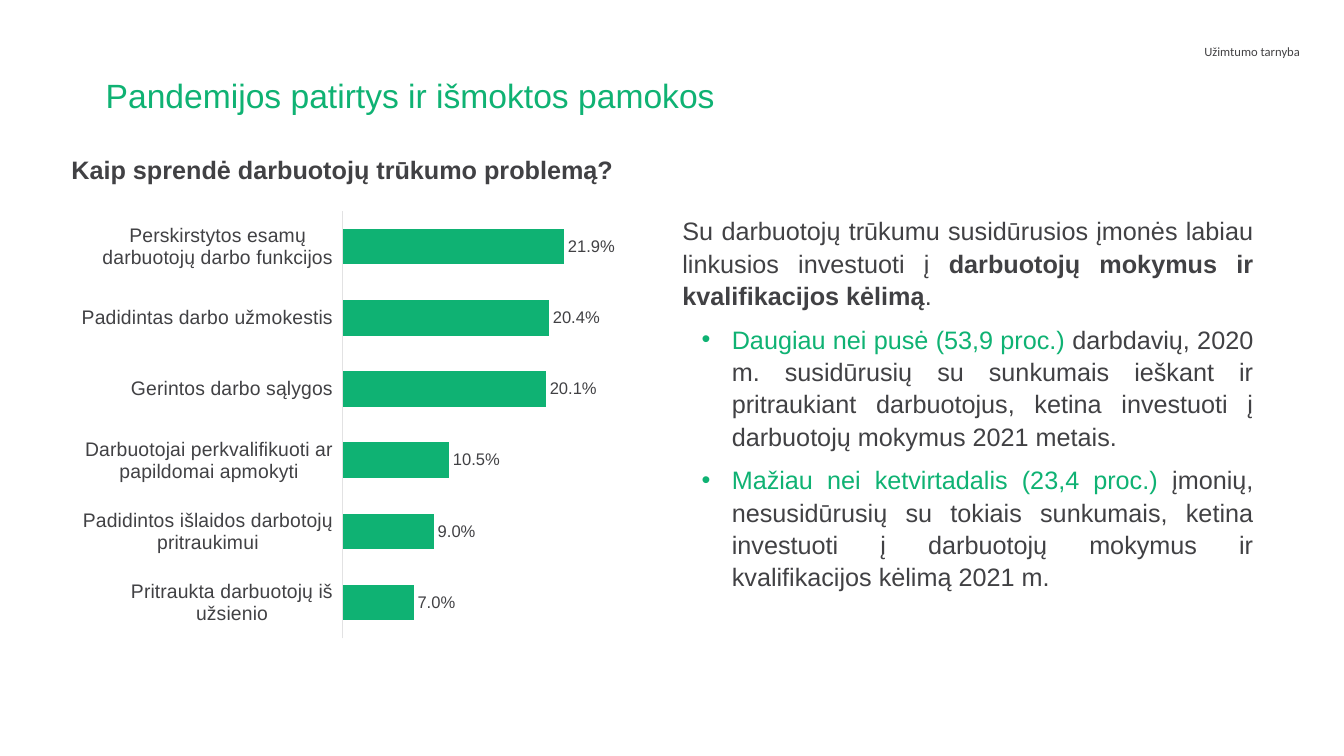
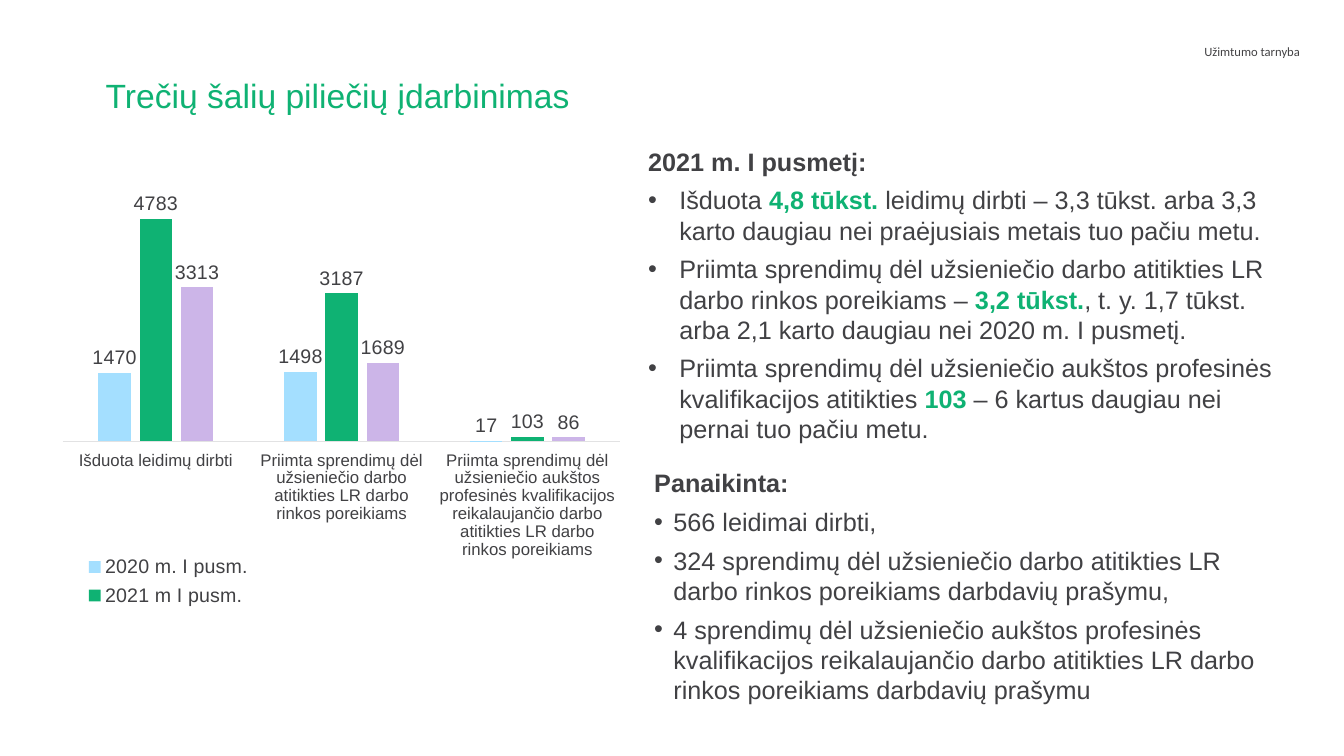
import pptx
import pptx.chart.data
import pptx.dml.color
import pptx.enum.chart
import pptx.enum.text
import pptx.oxml
import pptx.oxml.ns
import pptx.util

Inches, Pt = pptx.util.Inches, pptx.util.Pt
RGB = pptx.dml.color.RGBColor.from_string
Align = pptx.enum.text.PP_ALIGN
Kind = pptx.enum.chart.XL_CHART_TYPE
qn, nsdecls = pptx.oxml.ns.qn, pptx.oxml.ns.nsdecls
parse_xml = pptx.oxml.parse_xml

HUES = {"green": "0FB273", "text": "414144", "head": "434244",
        "line": "E2E2E3", "sky": "A4DFFF", "lilac": "CCB5E8"}
LAYOUT = ('<c:layout %s><c:manualLayout>%s<c:xMode val="edge"/><c:yMode val="edge"/>'
          '<c:x val="%s"/><c:y val="%s"/><c:w val="%s"/><c:h val="%s"/>'
          '</c:manualLayout></c:layout>')


def write(slide, box, paras, size=18, font="Arial", hue="text", align=Align.LEFT,
          space=None, after=0, indent=None):
    """Add a text box; a run is (text, flags), b for bold and g for green.

    With an indent, every paragraph after the first gets a bullet; the indent
    holds its left margin and its hang.
    """
    frame = slide.shapes.add_textbox(*map(Inches, box)).text_frame
    frame.word_wrap = True
    for i, runs in enumerate(paras):
        para = frame.paragraphs[0] if i == 0 else frame.add_paragraph()
        if indent and i > 0:
            props = para._p.get_or_add_pPr()
            props.set("marL", str(Inches(indent[0])))
            props.set("indent", str(-Inches(indent[1])))
            props.append(parse_xml('<a:buFont %s typeface="Arial"/>' % nsdecls("a")))
            props.append(parse_xml('<a:buChar %s char="•"/>' % nsdecls("a")))
        para.alignment = align
        para.space_after = Pt(after)
        if space:
            para.line_spacing = space
        for text, flags in runs:
            run = para.add_run()
            run.text = text
            run.font.size, run.font.name = Pt(size), font
            run.font.bold = "b" in flags
            run.font.color.rgb = RGB(HUES["green" if "g" in flags else hue])


def plot_bars(slide, box, kind, cats, series, area, top, size, label, gap, lap=0, form="General"):
    """Add a bar chart with a hidden value axis; series holds (name, hue, values)."""
    data = pptx.chart.data.CategoryChartData(number_format=form)
    data.categories = cats
    for name, _, values in series:
        data.add_series(name, values)
    chart = slide.shapes.add_chart(kind, *map(Inches, box), data).chart
    chart.has_title = chart.has_legend = False
    chart.font.name, chart.font.size = "Arial", Pt(label)
    chart.font.color.rgb = RGB(HUES["text"])

    plot = chart.plots[0]
    plot.gap_width, plot.overlap, plot.vary_by_categories = gap, lap, False
    for bar, (_, hue, _) in zip(plot.series, series):
        bar.invert_if_negative = False
        bar.format.fill.solid()
        bar.format.fill.fore_color.rgb = RGB(HUES[hue])
        tags = bar.data_labels
        tags.show_value = True
        tags.number_format, tags.number_format_is_linked = form, False
        tags.position = pptx.enum.chart.XL_LABEL_POSITION.OUTSIDE_END
        tags.font.size, tags.font.name = Pt(label), "Arial"
        tags.font.color.rgb = RGB(HUES["text"])

    axis = chart.value_axis
    axis.minimum_scale, axis.maximum_scale = 0, top
    axis.has_major_gridlines = axis.visible = False
    axis = chart.category_axis
    axis.major_tick_mark = pptx.enum.chart.XL_TICK_MARK.NONE
    axis.tick_label_position = pptx.enum.chart.XL_TICK_LABEL_POSITION.LOW
    axis.tick_labels.font.size, axis.tick_labels.font.name = Pt(size), "Arial"
    axis.tick_labels.font.color.rgb = RGB(HUES["text"])
    axis.format.line.color.rgb = RGB(HUES["line"])
    axis.format.line.width = Pt(0.75)

    plane = chart._chartSpace.find(".//" + qn("c:plotArea"))
    for old in plane.findall(qn("c:layout")):
        plane.remove(old)
    inner = '<c:layoutTarget val="inner"/>'
    plane.insert(0, parse_xml(LAYOUT % (nsdecls("c"), inner, *area)))
    return chart


deck = pptx.Presentation()
deck.slide_width, deck.slide_height = Inches(13.33), Inches(7.5)
slides = []
for title in ("Pandemijos patirtys ir išmoktos pamokos",
              "Trečių šalių piliečių įdarbinimas"):
    slide = deck.slides.add_slide(deck.slide_layouts[6])
    write(slide, (8.49, 0.39, 4.5, 0.47), [[("Užimtumo tarnyba", "")]],
          size=9, font="Calibri", hue="head", align=Align.RIGHT)
    write(slide, (0.95, 0.74, 11.44, 0.75), [[(title, "g")]], size=24, space=0.9)
    slides.append(slide)
lessons, permits = slides

# Pandemic lessons
write(lessons, (0.61, 1.46, 5.68, 0.4),
      [[("Kaip sprendė darbuotojų trūkumo problemą?", "b")]], space=1.07, after=8)
plot_bars(
    lessons, (0.81, 1.86, 5.29, 4.66), Kind.BAR_CLUSTERED,
    ["Pritraukta darbuotojų iš užsienio",
     "Padidintos išlaidos darbotojų pritraukimui",
     "Darbuotojai perkvalifikuoti ar papildomai apmokyti",
     "Gerintos darbo sąlygos",
     "Padidintas darbo užmokestis",
     "Perskirstytos esamų darbuotojų darbo funkcijos"],
    [("Series 1", "green", (0.07, 0.09, 0.105, 0.201, 0.204, 0.219))],
    area=(0.49, 0.05, 0.48, 0.91), top=0.25, size=14, label=12, gap=100, form="0.0%")
write(lessons, (6.67, 2.07, 5.86, 4.3), [
    [("Su darbuotojų trūkumu susidūrusios įmonės labiau linkusios investuoti į ", ""),
     ("darbuotojų mokymus ir kvalifikacijos kėlimą", "b"), (".", "")],
    [("Daugiau nei pusė (53,9 proc.) ", "g"),
     ("darbdavių, 2020 m. susidūrusių su sunkumais ieškant ir pritraukiant "
      "darbuotojus, ketina investuoti į darbuotojų mokymus 2021 metais.", "")],
    [("Mažiau nei ketvirtadalis (23,4 proc.) ", "g"),
     ("įmonių, nesusidūrusių su tokiais sunkumais, ketina investuoti į "
      "darbuotojų mokymus ir kvalifikacijos kėlimą 2021 m.", "")],
], align=Align.JUSTIFY, space=1.07, after=8, indent=(0.49, 0.3))

# Work permits
chart = plot_bars(
    permits, (0.45, 1.61, 5.82, 4.47), Kind.COLUMN_CLUSTERED,
    ["Išduota leidimų dirbti",
     "Priimta sprendimų dėl užsieniečio darbo atitikties LR darbo rinkos poreikiams",
     "Priimta sprendimų dėl užsieniečio aukštos profesinės kvalifikacijos "
     "reikalaujančio darbo atitikties LR darbo rinkos poreikiams"],
    [("2020 m. I pusm.", "sky", (1470, 1498, 17)),
     ("2021 m I pusm.", "green", (4783, 3187, 103)),
     ("Pokytis", "lilac", (3313, 1689, 86))],
    area=(0.03, 0, 0.95, 0.62), top=6000, size=12, label=14, gap=219, lap=-27)
chart.has_legend = True
legend = chart.legend
legend.position = pptx.enum.chart.XL_LEGEND_POSITION.BOTTOM
legend.include_in_layout = False
legend.font.size, legend.font.name = Pt(14), "Arial"
legend.font.color.rgb = RGB(HUES["text"])
# The legend leaves out the third series
node = legend._element
for old in node.findall(qn("c:layout")):
    node.remove(old)
place = node.find(qn("c:legendPos"))
place.addnext(parse_xml(LAYOUT % (nsdecls("c"), "", 0.05, 0.86, 0.32, 0.14)))
place.addnext(parse_xml('<c:legendEntry %s><c:idx val="2"/><c:delete val="1"/>'
                        '</c:legendEntry>' % nsdecls("c")))

write(permits, (6.33, 1.4, 6.55, 3.08), [
    [("2021 m. I pusmetį:", "b")],
    [("Išduota ", ""), ("4,8 tūkst. ", "gb"),
     ("leidimų dirbti – 3,3 tūkst. arba 3,3 karto daugiau nei praėjusiais "
      "metais tuo pačiu metu.", "")],
    [("Priimta sprendimų dėl užsieniečio darbo atitikties LR darbo rinkos "
      "poreikiams – ", ""), ("3,2 tūkst.", "gb"),
     (", t. y. 1,7 tūkst. arba 2,1 karto daugiau nei 2020 m. I pusmetį.", "")],
    [("Priimta sprendimų dėl užsieniečio aukštos profesinės kvalifikacijos "
      "atitikties ", ""), ("103", "gb"),
     (" – 6 kartus daugiau nei pernai tuo pačiu metu.", "")],
], after=6, indent=(0.31, 0.31))
write(permits, (6.39, 4.59, 6.32, 2.47), [
    [("Panaikinta:", "b")],
    [("566 leidimai dirbti,", "")],
    [("324 sprendimų dėl užsieniečio darbo atitikties LR darbo rinkos "
      "poreikiams darbdavių prašymu,", "")],
    [("4 sprendimų dėl užsieniečio aukštos profesinės kvalifikacijos "
      "reikalaujančio darbo atitikties LR darbo rinkos poreikiams "
      "darbdavių prašymu", "")],
], after=6, indent=(0.19, 0.19))

deck.save("out.pptx")
